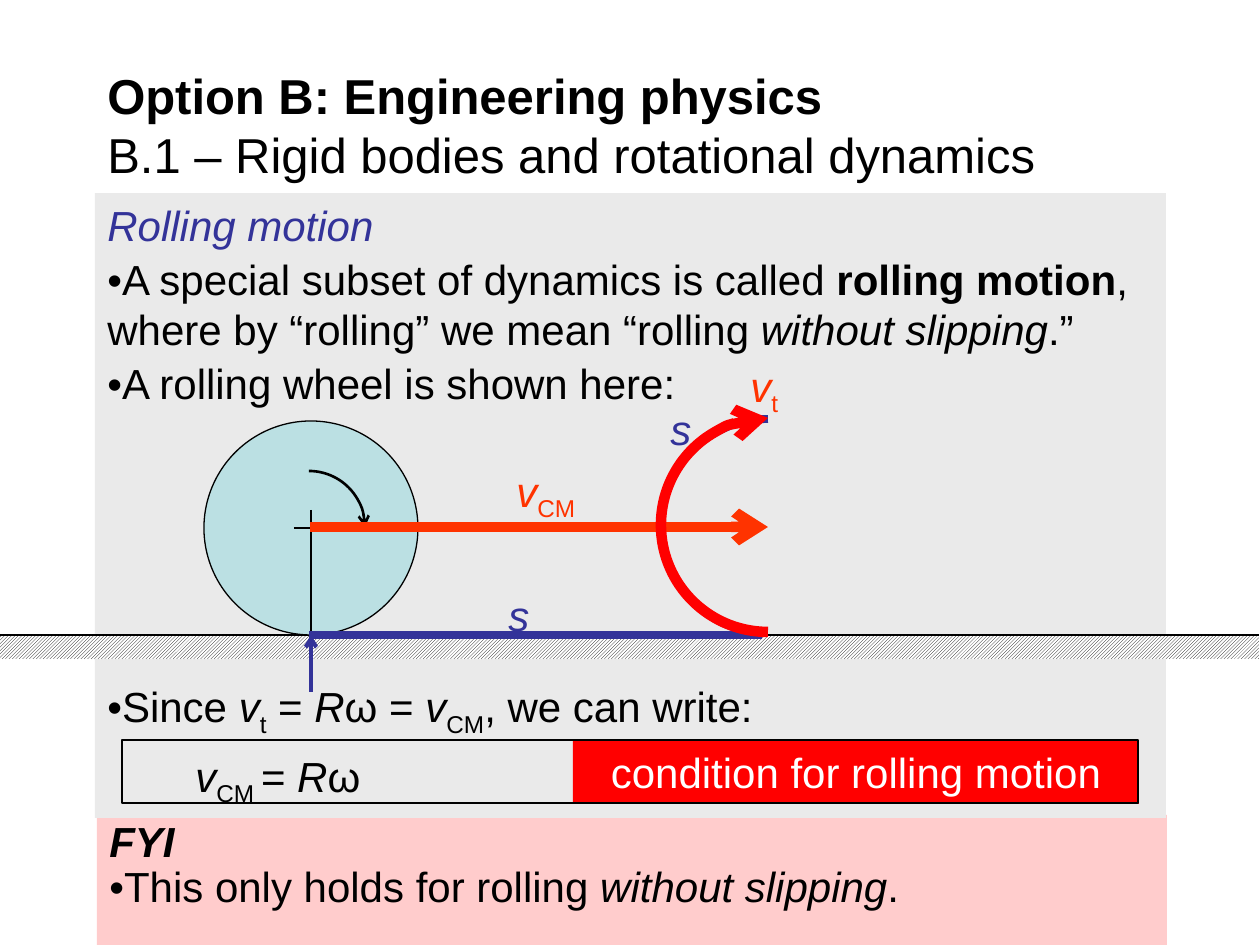
from lxml import etree
from pptx import Presentation, util as u
from pptx.dml.color import RGBColor
from pptx.enum import dml, shapes, text
from pptx.oxml.ns import qn

PX = 914400 / 126
HUES = {
    "black": "000000", "white": "FFFFFF", "pink": "FFCCCC", "gray": "EAEAEA",
    "blue": "333399", "red": "FF0000", "orange": "FF3300", "wheel": "BBE0E3",
}
KIND = shapes.MSO_SHAPE


def px(n):
    return u.Emu(round(n * PX))


def hue(name):
    return RGBColor.from_string(HUES[name])


def stroke(item, color, width, arrow=False):
    item.line.color.rgb = hue(color)
    item.line.width = u.Pt(width)
    if arrow:
        ln = item.line._get_or_add_ln()
        etree.SubElement(ln, qn("a:tailEnd"), type="arrow")


def shape(slide, box, kind=KIND.RECTANGLE, fill=None, line=None, width=1):
    item = slide.shapes.add_shape(kind, *map(px, box))
    item.shadow.inherit = False
    if fill:
        item.fill.solid()
        item.fill.fore_color.rgb = hue(fill)
    else:
        item.fill.background()
    if line:
        stroke(item, line, width)
    else:
        item.line.fill.background()
    return item


def line(slide, start, end, color="black", width=0.75, arrow=False):
    item = slide.shapes.add_connector(
        shapes.MSO_CONNECTOR.STRAIGHT, *map(px, start + end))
    etree.SubElement(item._element.spPr, qn("a:effectLst"))
    stroke(item, color, width, arrow)


def arc(slide, box, start, end, color, width, arrow=False):
    """Clockwise arc between two angles in degrees."""
    item = shape(slide, box, KIND.ARC)
    item.adjustments[0] = start * 0.6
    item.adjustments[1] = end * 0.6
    stroke(item, color, width, arrow)


def write(item, paras, size=24, color="black", align="LEFT", anchor="TOP",
          wrap=True, after=0, lead=None):
    """Each paragraph lists (words, marks): b bold, i italic, s subscript."""
    frame = item.text_frame
    frame.word_wrap = wrap
    frame.vertical_anchor = getattr(text.MSO_ANCHOR, anchor)
    for n, runs in enumerate(paras):
        para = frame.add_paragraph() if n else frame.paragraphs[0]
        para.alignment = getattr(text.PP_ALIGN, align)
        para.space_after = u.Pt(after)
        if lead:
            para.line_spacing = lead
        for words, marks in runs:
            run = para.add_run()
            run.text = words
            font = run.font
            font.name, font.size = "Arial", u.Pt(size)
            font.bold, font.italic = "b" in marks, "i" in marks
            font.color.rgb = hue(color)
            if "s" in marks:
                run._r.get_or_add_rPr().set("baseline", "-25000")
    return frame


def label(slide, box, paras, **style):
    return write(slide.shapes.add_textbox(*map(px, box)), paras, **style)


def panels(slide):
    # Note at the foot
    write(shape(slide, (97, 815, 1070, 130), fill="pink"), [
        [("FYI", "bi")],
        [("•This only holds for rolling ", ""), ("without slipping", "i"),
         (".", "")],
    ], lead=0.9)

    # Main text, with room for the drawing before its last paragraph
    main_box = shape(slide, (95, 193, 1071, 625), fill="gray")
    frame = write(main_box, [
        [("Rolling motion", "i")],
        [("•A special subset of dynamics is called ", ""),
         ("rolling motion", "b"),
         (", where by “rolling” we mean “rolling ", ""),
         ("without slipping", "i"), (".”", "")],
        [("•A rolling wheel is shown here:", "")],
        [("•Since ", ""), ("v", "i"), ("t", "s"), (" = ", ""), ("R", "i"),
         ("ω = ", ""), ("v", "i"), ("CM", "s"), (", we can write:", "")],
    ], after=2)
    frame.paragraphs[0].runs[0].font.color.rgb = hue("blue")
    frame.paragraphs[-1].space_before = u.Pt(154)

    # Title
    label(slide, (95, 63, 1071, 123), [
        [("Option B: Engineering physics", "b")],
        [("B.1 – Rigid bodies and rotational dynamics", "")],
    ], size=28, anchor="MIDDLE")


def ground(slide):
    fill = shape(slide, (-1, 635, 1260, 24), fill="white").fill
    fill.patterned()
    fill.pattern = dml.MSO_PATTERN.LIGHT_UPWARD_DIAGONAL
    fill.fore_color.rgb = hue("black")
    fill.back_color.rgb = hue("white")
    line(slide, (-1, 635), (1259, 635))


def rule(slide):
    # Formula with its caption
    write(shape(slide, (573, 740, 566, 64), fill="red"),
          [[("condition for rolling motion", "")]],
          color="white", align="CENTER")
    shape(slide, (122, 740, 1016, 63), line="black")
    label(slide, (183, 745, 675, 95), [
        [("v", "i"), ("CM ", "s"), ("= ", ""), ("R", "i"), ("ω", "")],
    ], lead=0.9)


def wheel(slide):
    # Wheel, axle cross and sense of turning
    shape(slide, (204, 421, 214, 214), KIND.OVAL, "wheel", "black", 0.75)
    line(slide, (294, 528), (326, 528))
    line(slide, (311, 510), (311, 635))
    arc(slide, (253, 471, 112, 112), 270, 0, "black", 1.5, True)

    # Contact point and equal distances
    line(slide, (311, 692), (311, 635), "blue", 2.25, True)
    arc(slide, (661, 419, 214, 214), 90, 270, "blue", 4.5)
    line(slide, (309, 635), (762, 635), "blue", 4.5)
    for spot in ((658, 397), (496, 583)):
        label(slide, spot + (47, 64), [[("s", "i")]], color="blue", wrap=False)

    # Velocities
    line(slide, (310, 527), (768, 527), "orange", 6, True)
    arc(slide, (661, 418, 214, 214), 90, 270, "red", 6, True)
    for box, sub in (((504, 459, 93, 64), "CM"), ((738, 354, 54, 63), "t")):
        label(slide, box, [[("v", "i"), (sub, "s")]],
              color="orange", wrap=False)


def main():
    deck = Presentation()
    deck.slide_width, deck.slide_height = px(1260), px(945)
    slide = deck.slides.add_slide(deck.slide_layouts[6])
    for part in (panels, ground, rule, wheel):
        part(slide)
    deck.save("out.pptx")


if __name__ == "__main__":
    main()
